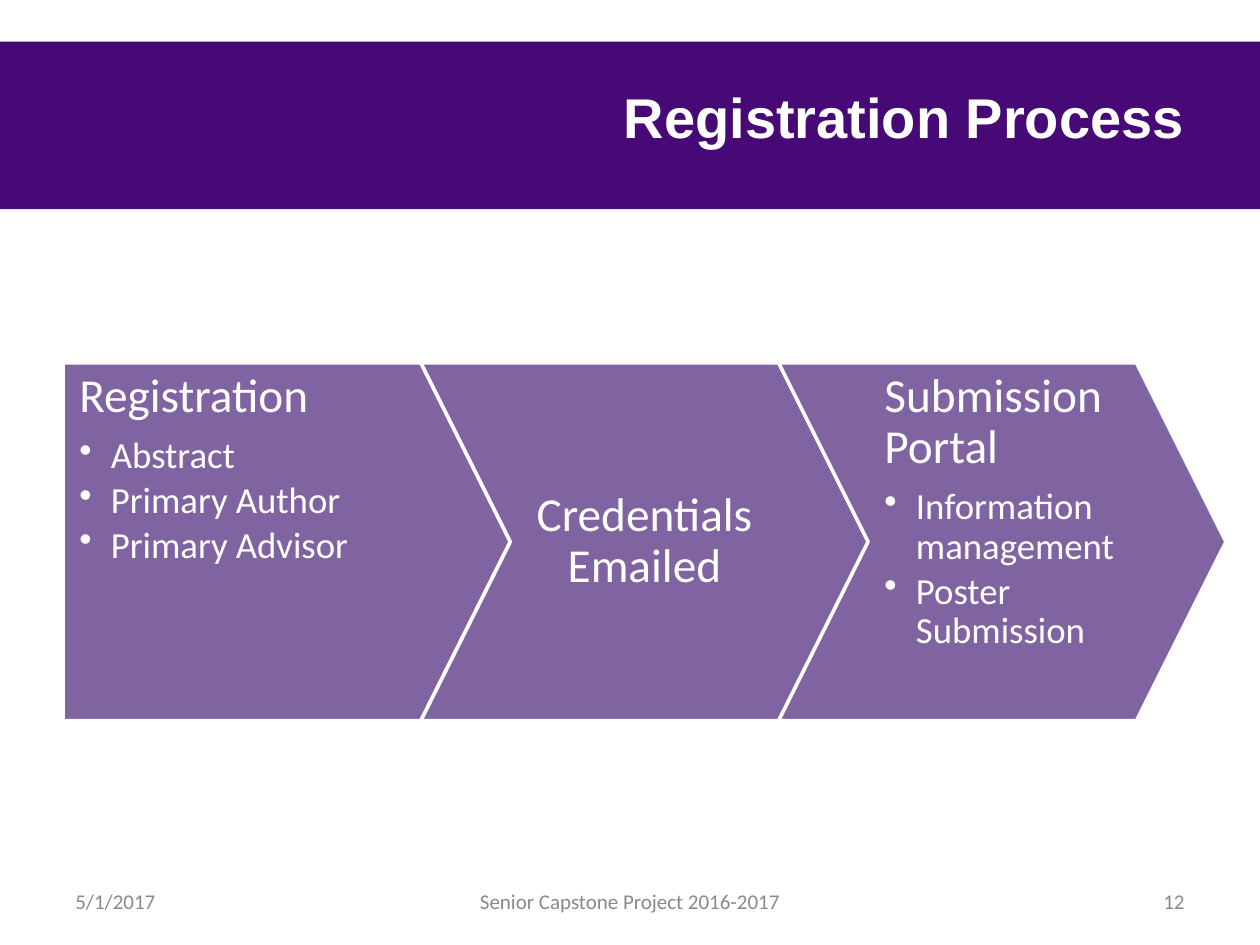
from collections import namedtuple
from dataclasses import dataclass

from lxml import etree
from pptx import Presentation, util as u
from pptx.dml.color import RGBColor
from pptx.enum import shapes as s, text as t
from pptx.oxml.ns import qn

Box = namedtuple("Box", "left top width height")


@dataclass(frozen=True)
class Theme:
    band: str = "460975"
    step: str = "8064A2"
    light: str = "FFFFFF"
    muted: str = "898989"
    heading_font: str = "Arial"
    body_font: str = "Calibri"
    title: int = 32
    heading: int = 27
    detail: int = 21
    footer: int = 12


THEME = Theme()
SIZE = (10, 7.5)
MARGIN = 0.05 * SIZE[0]
STEPS = [
    ("Registration", ["Abstract", "Primary Author", "Primary Advisor"]),
    ("Credentials Emailed", []),
    ("Submission Portal", ["Information management", "Poster Submission"]),
]


def inches(box):
    return [u.Inches(length) for length in box]


def add_block(slide, kind, box, fill, line=None):
    block = slide.shapes.add_shape(kind, *inches(box))
    block.shadow.inherit = False
    block.fill.solid()
    block.fill.fore_color.rgb = RGBColor.from_string(fill)
    if line:
        block.line.color.rgb = RGBColor.from_string(line)
        block.line.width = u.Pt(2)
    else:
        block.line.fill.background()
    return block


def add_frame(slide, box, insets=(0.1, 0.05, 0.1, 0.05), anchor=t.MSO_ANCHOR.MIDDLE):
    frame = slide.shapes.add_textbox(*inches(box)).text_frame
    frame.word_wrap = True
    frame.vertical_anchor = anchor
    (frame.margin_left, frame.margin_top,
     frame.margin_right, frame.margin_bottom) = inches(insets)
    return frame


def write(paragraph, words, size, color, font=THEME.body_font,
          align=t.PP_ALIGN.LEFT, bold=False):
    paragraph.text = words
    paragraph.alignment = align
    paragraph.font.size = u.Pt(size)
    paragraph.font.name = font
    paragraph.font.bold = bold
    paragraph.font.color.rgb = RGBColor.from_string(color)


def add_bullet(paragraph):
    properties = paragraph._p.get_or_add_pPr()
    properties.set("marL", str(u.Inches(0.25)))
    properties.set("indent", str(-u.Inches(0.25)))
    etree.SubElement(properties, qn("a:buChar")).set("char", "•")


def draw_header(slide, box, title):
    add_block(slide, s.MSO_SHAPE.RECTANGLE, box, THEME.band)
    title_box = Box(0.25 * SIZE[0], 0.04 * SIZE[1], 0.7 * SIZE[0], 1.25)
    write(add_frame(slide, title_box).paragraphs[0], title, THEME.title, THEME.light,
          THEME.heading_font, t.PP_ALIGN.RIGHT, bold=True)


def draw_step(slide, box, heading, details, first):
    """Draw one arrow; its text keeps clear of the notch and the point."""
    kind = s.MSO_SHAPE.PENTAGON if first else s.MSO_SHAPE.CHEVRON
    arrow = add_block(slide, kind, box, THEME.step, THEME.light)
    arrow.adjustments[0] = 0.25

    start, share, right_inset = (0, 0.9, 0.5) if first else (0.2, 0.6, 0.13)
    text_box = box._replace(left=box.left + start * box.width, width=share * box.width)
    anchor = t.MSO_ANCHOR.TOP if details else t.MSO_ANCHOR.MIDDLE
    align = t.PP_ALIGN.LEFT if details else t.PP_ALIGN.CENTER
    frame = add_frame(slide, text_box, (0.13, 0.07, right_inset, 0.07), anchor)

    write(frame.paragraphs[0], heading, THEME.heading, THEME.light, align=align)
    frame.paragraphs[0].space_after = u.Pt(8)
    for detail in details:
        item = frame.add_paragraph()
        add_bullet(item)
        write(item, detail, THEME.detail, THEME.light)
        item.space_after = u.Pt(3)
    for paragraph in frame.paragraphs:
        paragraph.line_spacing = 0.9


def draw_process(slide, box, steps):
    """Share the width among arrows that each overlap the next by a fifth."""
    pitch = box.width / (len(steps) + 0.25)
    for index, (heading, details) in enumerate(steps):
        step_box = Box(box.left + index * pitch, box.top, 1.25 * pitch, box.height)
        draw_step(slide, step_box, heading, details, first=index == 0)


def draw_footer(slide, box, date, project, number):
    side = 2.33
    middle = 3.17
    parts = [
        (date, box.left, side, t.PP_ALIGN.LEFT),
        (project, box.left + (box.width - middle) / 2, middle, t.PP_ALIGN.CENTER),
        (number, box.left + box.width - side, side, t.PP_ALIGN.RIGHT),
    ]
    for words, left, width, align in parts:
        frame = add_frame(slide, box._replace(left=left, width=width))
        write(frame.paragraphs[0], words, THEME.footer, THEME.muted, align=align)


def main():
    deck = Presentation()
    deck.slide_width, deck.slide_height = inches(SIZE)
    slide = deck.slides.add_slide(deck.slide_layouts[6])
    draw_header(slide, Box(-0.25, 0.33, SIZE[0] + 0.5, 1.33), "Registration Process")
    draw_process(slide, Box(MARGIN, 2.88, 9.23, 2.84), STEPS)
    draw_footer(slide, Box(MARGIN, 6.95, SIZE[0] - 2 * MARGIN, 0.4),
                "5/1/2017", "Senior Capstone Project 2016-2017", "12")
    deck.save("out.pptx")


if __name__ == "__main__":
    main()
